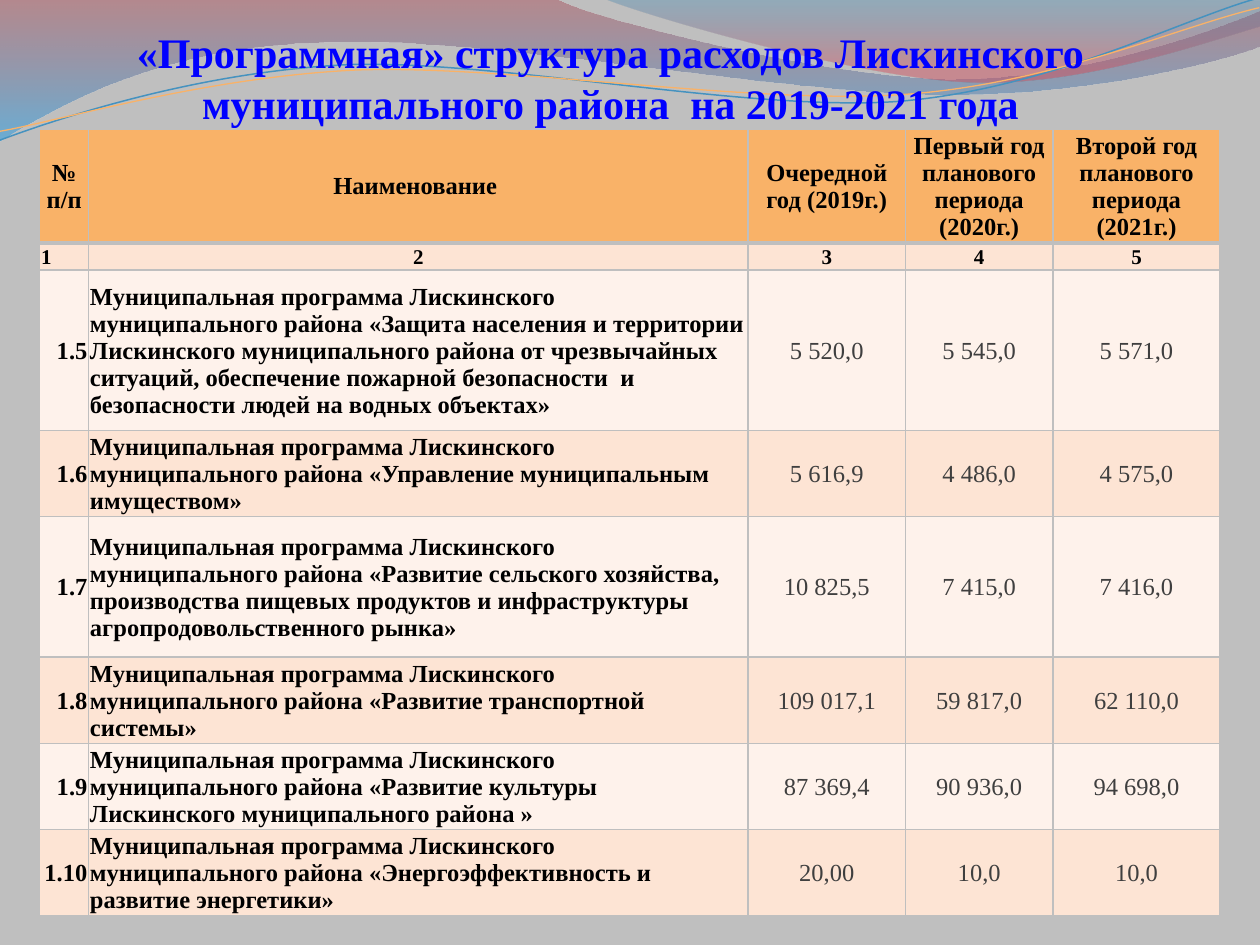
from dataclasses import dataclass

from lxml.etree import SubElement
from pptx import Presentation
from pptx.dml.color import RGBColor
from pptx.enum.text import MSO_ANCHOR, MSO_AUTO_SIZE, PP_ALIGN
from pptx.oxml import parse_xml
from pptx.oxml.ns import nsdecls, qn
from pptx.util import Pt


@dataclass(frozen=True)
class Theme:
    font: str = "Times New Roman"
    background: str = "BFBFBF"
    title: str = "0000FF"
    text: str = "000000"
    value: str = "3F3F3F"
    header: str = "F9B268"
    bands: tuple = ("FDE4D4", "FEF2EB")
    blue_line: str = "4592BF"
    orange_line: str = "F9B268"
    left_wave: tuple = ((0, "A84752", 45), (1, "249FE6", 55))
    right_wave: tuple = ((0, "2A7EAF", 30), (0.8, "D24B5A", 45))
    title_size: float = 24
    body_size: float = 14
    number_size: float = 12


LEFT_WAVE = [
    [(0, 0)], [(317, -1)],
    [(343, 12), (478, 45), (546, 45)], [(614, 45), (690, 19), (720, 6)],
    [(721, 26)],
    [(708, 32), (626, 55), (537, 54)], [(448, 54), (275, 20), (185, 24)],
    [(93, 26), (33, 60), (-1, 81)],
]
RIGHT_WAVE = [
    [(345, -1)],
    [(366, 8), (491, 45), (554, 47)], [(617, 50), (692, 23), (720, 15)],
    [(720, 0)],
]
BLUE_CURVE = [
    [(-1.4, 63.1)],
    [(34.2, 51.7), (114.3, 29.4), (199.4, 29.4)],
    [(284.4, 30.5), (425.8, 67.2), (512, 65.2)],
    [(599.2, 62.3), (676, 25.9), (720.6, 15.9)],
]
ORANGE_CURVE = [
    [(-1.4, 58.1)],
    [(33.2, 53.7), (118.2, 32.6), (204.3, 32.7)],
    [(290.3, 33.7), (429.1, 63.3), (515.3, 61.4)],
    [(601.5, 59.4), (674.9, 29.8), (721, 21.4)],
]
CURVE_TILT = -2.7

TITLE = "«Программная» структура расходов Лискинского муниципального района  на 2019-2021 года"
PROGRAM = "Муниципальная программа Лискинского муниципального района "
HEADER = ["№ п/п", "Наименование ", "Очередной год (2019г.)",
          "Первый год планового периода (2020г.)", "Второй год планового периода (2021г.)"]
PROGRAMS = [
    ("1.5", "«Защита населения и территории Лискинского муниципального района от чрезвычайных "
            "ситуаций, обеспечение пожарной безопасности  и безопасности людей на водных объектах»",
     "5 520,0", "5 545,0", "5 571,0"),
    ("1.6", "«Управление муниципальным имуществом»", "5 616,9", "4 486,0", "4 575,0"),
    ("1.7", "«Развитие сельского хозяйства, производства пищевых продуктов и инфраструктуры "
            "агропродовольственного рынка»", "10 825,5", "7 415,0", "7 416,0"),
    ("1.8", "«Развитие транспортной системы»", "109 017,1", "59 817,0", "62 110,0"),
    ("1.9", "«Развитие культуры Лискинского муниципального района »",
     "87 369,4", "90 936,0", "94 698,0"),
    ("1.10", "«Энергоэффективность и развитие энергетики»", "20,00", "10,0", "10,0"),
]
COLUMNS = [28, 376.8, 90, 84.2, 95.6]
ROWS = [65.2, 15.5, 91.6, 49.2, 80.4, 49.3, 49.3, 49.3]


def write(tf, text, *, font, size, color, bold=True, align=PP_ALIGN.LEFT):
    p = tf.paragraphs[0]
    p.alignment = align
    r = p.add_run()
    r.text = text
    r.font.name = font
    r.font.size = Pt(size)
    r.font.bold = bold
    r.font.color.rgb = RGBColor.from_string(color)


class Deck:
    def __init__(self, theme):
        self.theme = theme
        self.prs = Presentation()
        self.prs.slide_width, self.prs.slide_height = Pt(720), Pt(540)
        self.s = self.prs.slides.add_slide(self.prs.slide_layouts[5])
        fill = self.s.background.fill
        fill.solid()
        fill.fore_color.rgb = RGBColor.from_string(theme.background)

    def outline(self, segments, close):
        points = [(Pt(x), Pt(y)) for segment in segments for x, y in segment]
        builder = self.s.shapes.build_freeform(*points[0])
        builder.add_line_segments(points[1:], close=close)
        sp = builder.convert_to_shape()
        sp.shadow.inherit = False
        lines = iter(list(sp._element.iter(qn("a:lnTo"))))
        for segment in segments[1:]:
            group = [next(lines) for _ in segment]
            if len(group) == 3:
                bezier = parse_xml(f'<a:cubicBezTo {nsdecls("a")}/>')
                group[0].addprevious(bezier)
                for line in group:
                    bezier.append(line[0])
                    line.getparent().remove(line)
        return sp

    def wave(self, segments, stops):
        sp = self.outline(segments, True)
        sp.line.fill.background()
        sp.fill.gradient()
        sp.fill.gradient_angle = 270
        for stop, (position, color, _) in zip(sp.fill.gradient_stops, stops):
            stop.position = position
            stop.color.rgb = RGBColor.from_string(color)
        colors = sp._element.spPr.iter(qn("a:srgbClr"))
        for color, (_, _, opacity) in zip(colors, stops):
            SubElement(color, qn("a:alpha"), val=str(opacity * 1000))

    def curve(self, segments, color, width):
        sp = self.outline(segments, False)
        sp.rotation = CURVE_TILT
        sp.fill.background()
        sp.line.color.rgb = RGBColor.from_string(color)
        sp.line.width = Pt(width)

    def title(self, text, left, top, width, height):
        sp = self.s.shapes.title
        self.s.shapes._spTree.append(sp._element)
        sp.left, sp.top, sp.width, sp.height = map(Pt, (left, top, width, height))
        tf = sp.text_frame
        tf.word_wrap = True
        tf.auto_size = MSO_AUTO_SIZE.NONE
        tf.vertical_anchor = MSO_ANCHOR.BOTTOM
        tf.margin_left = tf.margin_right = tf.margin_bottom = 0
        tf.margin_top = Pt(3.6)
        write(tf, text, font=self.theme.font, size=self.theme.title_size,
              color=self.theme.title, align=PP_ALIGN.CENTER)

    def borders(self, cell, **widths):
        tc_pr = cell._tc.get_or_add_tcPr()
        for i, side in enumerate("LRTB"):
            tc_pr.insert(i, parse_xml(
                f'<a:ln{side} {nsdecls("a")} w="{Pt(widths.get(side, 1))}"><a:solidFill>'
                f'<a:srgbClr val="{self.theme.background}"/></a:solidFill></a:ln{side}>'))

    def cell(self, cell, text, fill, **style):
        cell.margin_left = cell.margin_right = cell.margin_top = Pt(0.75)
        cell.margin_bottom = 0
        cell.vertical_anchor = MSO_ANCHOR.MIDDLE
        cell.fill.solid()
        cell.fill.fore_color.rgb = RGBColor.from_string(fill)
        write(cell.text_frame, text, font=self.theme.font, **style)

    def table(self, left, top, columns, heights, rows):
        th = self.theme
        table = self.s.shapes.add_table(len(heights), len(columns), Pt(left), Pt(top),
                                        Pt(sum(columns)), Pt(sum(heights))).table
        for column, width in zip(table.columns, columns):
            column.width = Pt(width)
        for row, height in zip(table.rows, heights):
            row.height = Pt(height)
        for i, texts in enumerate(rows):
            fill = th.header if i == 0 else th.bands[(i - 1) % 2]
            for j, text in enumerate(texts):
                style = dict(size=th.number_size if i == 1 else th.body_size,
                             color=th.text, align=PP_ALIGN.CENTER)
                if i > 1 and j > 1:
                    style.update(color=th.value, bold=False)
                elif i > 1:
                    style.update(align=PP_ALIGN.LEFT if j else PP_ALIGN.RIGHT)
                elif i == 1 and j == 0:
                    style.update(align=PP_ALIGN.LEFT)
                cell = table.cell(i, j)
                self.cell(cell, text, fill, **style)
                self.borders(cell, **{0: {"B": 3}, 1: {"T": 3}}.get(i, {}))


def main():
    theme = Theme()
    deck = Deck(theme)
    deck.wave(LEFT_WAVE, theme.left_wave)
    deck.wave(RIGHT_WAVE, theme.right_wave)
    deck.curve(BLUE_CURVE, theme.blue_line, 0.85)
    deck.curve(ORANGE_CURVE, theme.orange_line, 0.75)
    deck.title(TITLE, 16.8, 16.8, 664, 56.2)
    programs = [(number, PROGRAM + name, *values) for number, name, *values in PROGRAMS]
    deck.table(22.7, 73.7, COLUMNS, ROWS, [HEADER, list("12345"), *programs])
    deck.prs.save("out.pptx")


if __name__ == "__main__":
    main()
